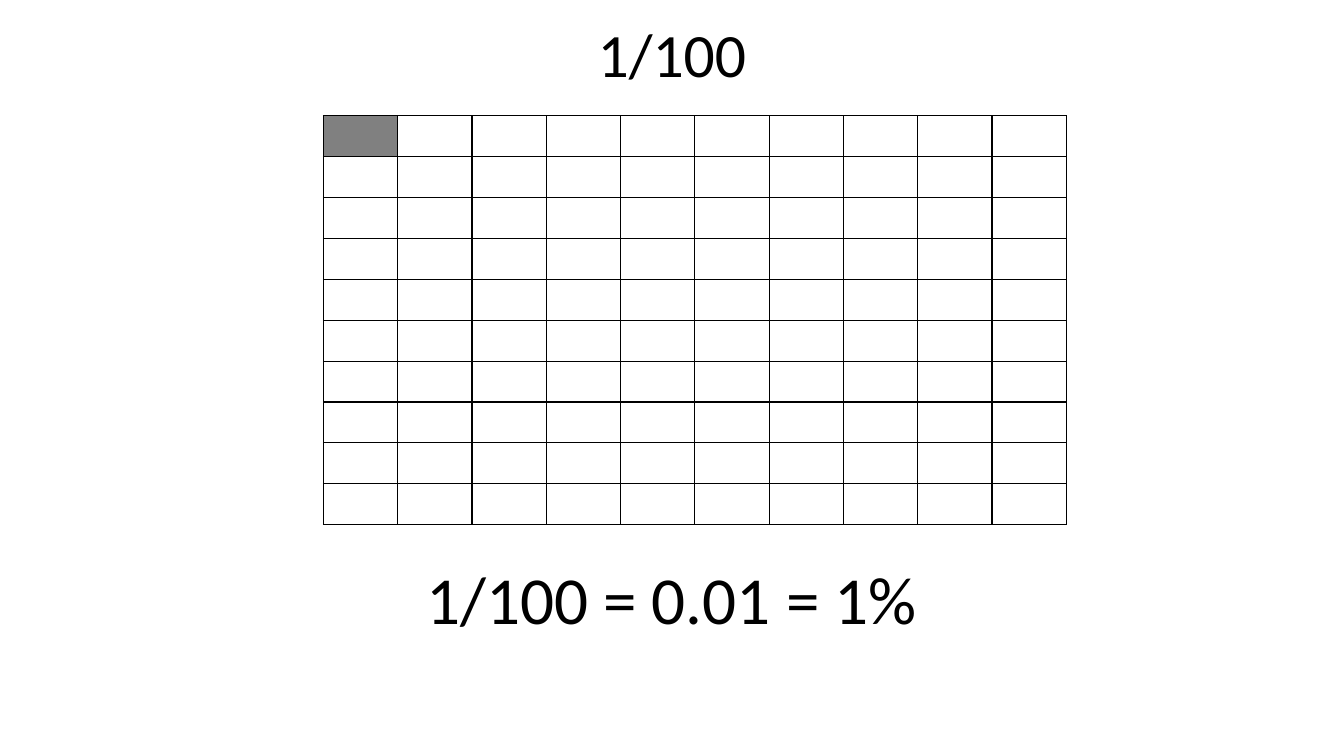
"""Build a slide showing one hundredth as a fraction, decimal and percentage."""
from lxml.etree import SubElement
from pptx import Presentation
from pptx.dml.color import RGBColor
from pptx.enum.text import MSO_ANCHOR, MSO_AUTO_SIZE, PP_ALIGN
from pptx.oxml.ns import qn
from pptx.util import Cm, Pt

BLACK = RGBColor(0x00, 0x00, 0x00)
WHITE = RGBColor(0xFF, 0xFF, 0xFF)
GRAY = RGBColor(0x80, 0x80, 0x80)
GRID_SIZE = 10
SHADED_CELLS = 1


def write_text(shape, text, size, anchor=MSO_ANCHOR.TOP, spacing=None,
               auto_size=MSO_AUTO_SIZE.NONE):
    frame = shape.text_frame
    frame.word_wrap = True
    frame.auto_size = auto_size
    frame.vertical_anchor = anchor
    paragraph = frame.paragraphs[0]
    paragraph.alignment = PP_ALIGN.CENTER
    paragraph.line_spacing = spacing
    run = paragraph.add_run()
    run.text = text
    run.font.name = "Calibri"
    run.font.size = Pt(size)
    run.font.color.rgb = BLACK


def add_borders(cell, color, width):
    properties = cell._tc.get_or_add_tcPr()
    for side in ("a:lnL", "a:lnR", "a:lnT", "a:lnB"):
        line = SubElement(properties, qn(side), w=str(width))
        fill = SubElement(line, qn("a:solidFill"))
        SubElement(fill, qn("a:srgbClr"), val=str(color))


presentation = Presentation()
presentation.slide_width = Cm(33.87)
presentation.slide_height = Cm(19.05)
slide = presentation.slides.add_slide(presentation.slide_layouts[5])

title = slide.shapes.title
title.left, title.top, title.width, title.height = Cm(2.33), Cm(0), Cm(29.21), Cm(2.92)
write_text(title, "1/100", size=44, anchor=MSO_ANCHOR.MIDDLE, spacing=0.9)

table = slide.shapes.add_table(
    GRID_SIZE, GRID_SIZE, Cm(8.15), Cm(2.92), Cm(18.72), Cm(10.16)
).table
table.first_row = False
table.horz_banding = False
for index, cell in enumerate(table.iter_cells()):
    add_borders(cell, BLACK, Pt(1))
    cell.fill.solid()
    cell.fill.fore_color.rgb = GRAY if index < SHADED_CELLS else WHITE

equation = slide.shapes.add_textbox(Cm(4.75), Cm(13.92), Cm(24.36), Cm(2.31))
write_text(equation, "1/100 = 0.01 = 1%", size=48,
           auto_size=MSO_AUTO_SIZE.SHAPE_TO_FIT_TEXT)

presentation.save("out.pptx")
